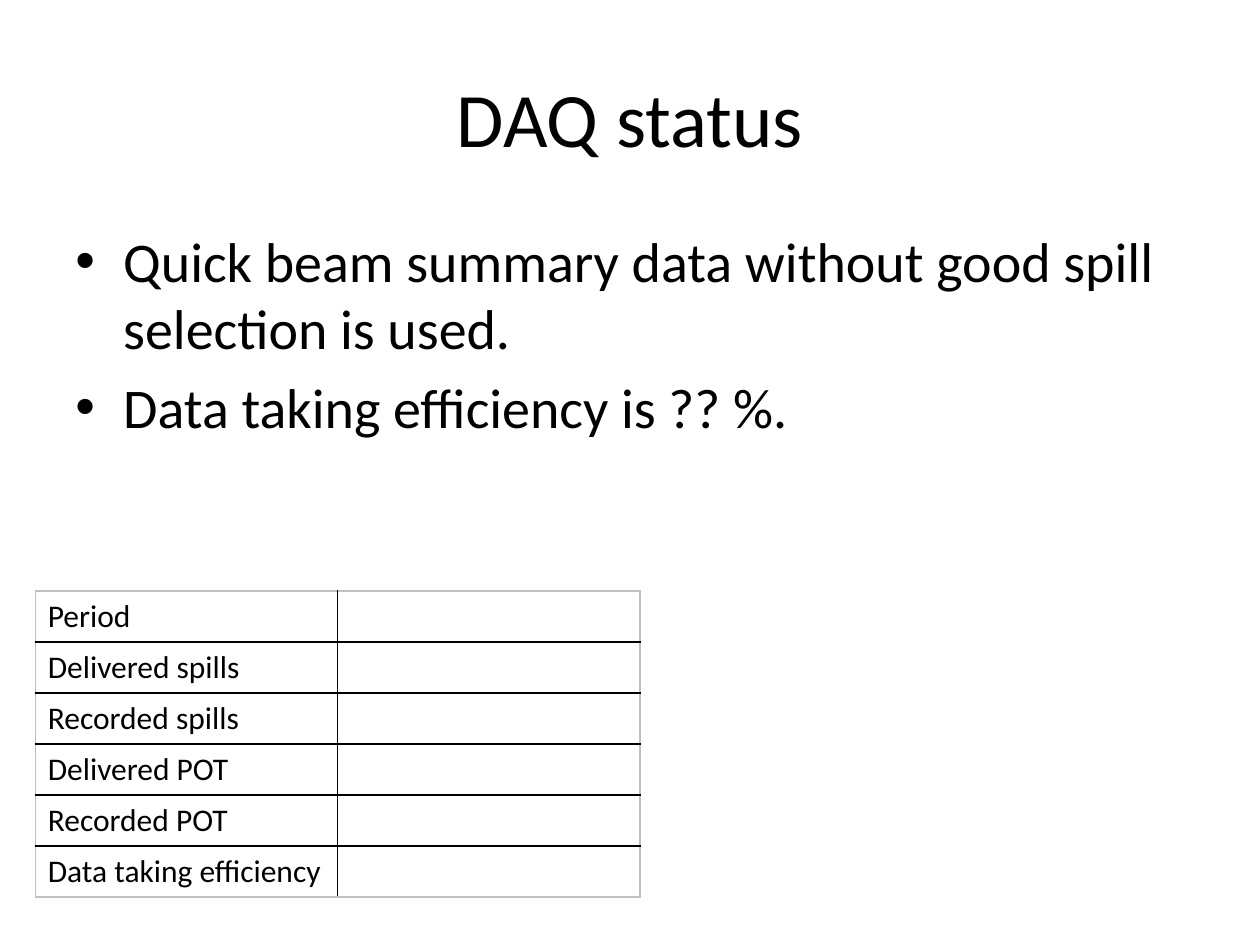
import pptx
import pptx.dml.color
import pptx.enum.text
import pptx.oxml
import pptx.oxml.ns
import pptx.util

BLACK = pptx.dml.color.RGBColor(0, 0, 0)
GREY = pptx.dml.color.RGBColor(0xC0, 0xC0, 0xC0)
FONT = "Calibri"
WIDTH = pptx.util.Inches(10)
HEIGHT = pptx.util.Inches(7.5)
MARGIN = 0.05
INDENT = pptx.util.Inches(0.38)
TITLE = "DAQ status"
POINTS = [
    "Quick beam summary data without good spill selection is used.",
    "Data taking efficiency is ?? %.",
]
LABELS = [
    "Period",
    "Delivered spills",
    "Recorded spills",
    "Delivered POT",
    "Recorded POT",
    "Data taking efficiency",
]


def share(left, top, width, height):
    return (int(WIDTH * left), int(HEIGHT * top),
            int(WIDTH * width), int(HEIGHT * height))


def add_span(para, text, size):
    span = para.add_run()
    span.text = text
    span.font.name = FONT
    span.font.size = pptx.util.Pt(size)
    span.font.color.rgb = BLACK


def add_box(page, area, anchor):
    frame = page.shapes.add_textbox(*area).text_frame
    frame.word_wrap = True
    frame.vertical_anchor = anchor
    return frame


def add_title(page, text):
    area = share(MARGIN, 0.04, 1 - 2 * MARGIN, 1 / 6)
    frame = add_box(page, area, pptx.enum.text.MSO_ANCHOR.MIDDLE)
    para = frame.paragraphs[0]
    para.alignment = pptx.enum.text.PP_ALIGN.CENTER
    add_span(para, text, 44)


def set_bullet(para):
    properties = para._p.get_or_add_pPr()
    properties.set("marL", str(INDENT))
    properties.set("indent", str(-INDENT))
    namespace = pptx.oxml.ns.nsdecls("a")
    for markup in (f'<a:buFont {namespace} typeface="Arial"/>',
                   f'<a:buChar {namespace} char="•"/>'):
        properties.append(pptx.oxml.parse_xml(markup))


def add_bullets(page, points, size):
    area = share(MARGIN, 1.75 / 7.5, 1 - 2 * MARGIN, 0.66)
    frame = add_box(page, area, pptx.enum.text.MSO_ANCHOR.TOP)
    for index, point in enumerate(points):
        para = frame.add_paragraph() if index else frame.paragraphs[0]
        para.space_before = pptx.util.Pt(size * 0.2)
        set_bullet(para)
        add_span(para, point, size)


def set_borders(cell, colors):
    properties = cell._tc.get_or_add_tcPr()
    namespace = pptx.oxml.ns.nsdecls("a")
    for index, (side, color) in enumerate(colors.items()):
        line = pptx.oxml.parse_xml(
            f'<a:ln{side} {namespace} w="{pptx.util.Pt(1)}"><a:solidFill>'
            f'<a:srgbClr val="{color}"/></a:solidFill></a:ln{side}>')
        properties.insert(index, line)


def add_summary(page, labels):
    rows, columns = len(labels), 2
    area = share(0.028, 4.69 / 7.5, 0.48, 0.324)
    table = page.shapes.add_table(rows, columns, *area).table
    table.first_row = False
    table.horz_banding = False
    for row, label in enumerate(labels):
        for column in range(columns):
            cell = table.cell(row, column)
            cell.fill.background()
            set_borders(cell, {
                "L": BLACK if column else GREY,
                "R": BLACK if column < columns - 1 else GREY,
                "T": BLACK if row else GREY,
                "B": BLACK if row < rows - 1 else GREY,
            })
        add_span(table.cell(row, 0).text_frame.paragraphs[0], label, 18)


def main():
    deck = pptx.Presentation()
    deck.slide_width = WIDTH
    deck.slide_height = HEIGHT
    page = deck.slides.add_slide(deck.slide_layouts[6])
    add_title(page, TITLE)
    add_bullets(page, POINTS, 32)
    add_summary(page, LABELS)
    deck.save("out.pptx")


if __name__ == "__main__":
    main()
